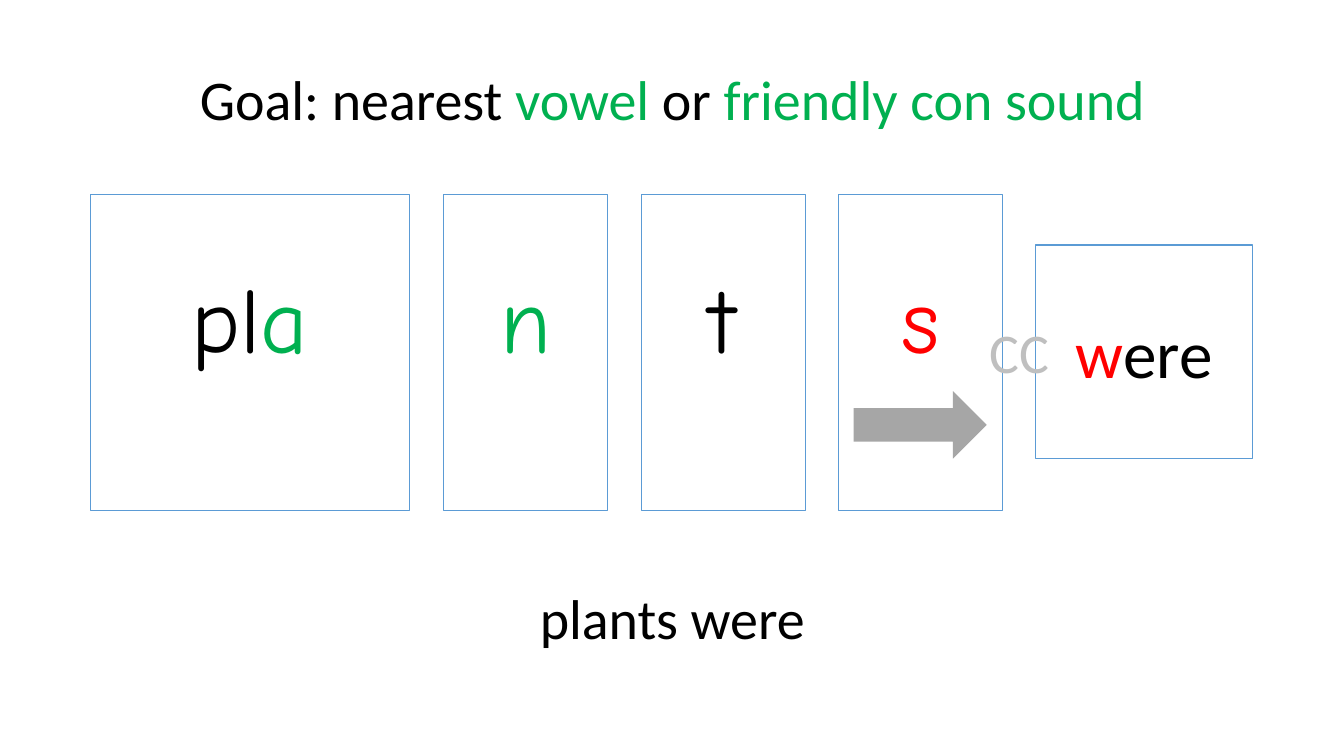
from pptx import Presentation
from pptx.dml.color import RGBColor
from pptx.enum.shapes import MSO_SHAPE
from pptx.enum.text import MSO_ANCHOR, PP_ALIGN
from pptx.util import Pt

RECTANGLE = MSO_SHAPE.RECTANGLE
RIGHT_ARROW = MSO_SHAPE.RIGHT_ARROW
TOP = MSO_ANCHOR.TOP
CENTER = PP_ALIGN.CENTER

BLACK = RGBColor(0x00, 0x00, 0x00)
GREEN = RGBColor(0x00, 0xB0, 0x50)
RED = RGBColor(0xFF, 0x00, 0x00)
BLUE = RGBColor(0x5B, 0x9B, 0xD5)
LIGHT_GRAY = RGBColor(0xBF, 0xBF, 0xBF)
GRAY = RGBColor(0xA6, 0xA6, 0xA6)

LETTER_FONT = "Comic Neue"
BODY_FONT = "Calibri"
TEXT_DROP = 47.5
LETTER_LEFT = 316.8
LETTER_PITCH = 141.1


def write_spans(box, spans, font, size):
    """Write coloured spans as one centred, top-anchored paragraph."""
    frame = box.text_frame
    frame.word_wrap = True
    frame.vertical_anchor = TOP
    para = frame.paragraphs[0]
    para.alignment = CENTER
    for text, color in spans:
        span = para.add_run()
        span.text = text
        span.font.name = font
        span.font.size = Pt(size)
        span.font.color.rgb = color


def add_label(page, left, top, width, spans):
    """Add a one-line text box."""
    box = page.shapes.add_textbox(Pt(left), Pt(top), Pt(width), Pt(55.7))
    write_spans(box, spans, BODY_FONT, 40)


def add_card(page, left, top, width, height, spans, font, size):
    """Add an outlined card with its text set below the top edge."""
    card = page.shapes.add_shape(RECTANGLE, Pt(left), Pt(top), Pt(width), Pt(height))
    card.shadow.inherit = False
    card.fill.background()
    card.line.color.rgb = BLUE
    card.line.width = Pt(0.75)
    card.text_frame.margin_top = Pt(TEXT_DROP)
    write_spans(card, spans, font, size)


def add_sound_card(page, left, width, spans):
    """Add a tall card for one sound of the first word."""
    add_card(page, left, 139, width, 225.4, spans, LETTER_FONT, 66)


def add_arrow(page, left, top, width, height):
    """Add a solid arrow pointing right."""
    arrow = page.shapes.add_shape(RIGHT_ARROW, Pt(left), Pt(top), Pt(width), Pt(height))
    arrow.shadow.inherit = False
    arrow.fill.solid()
    arrow.fill.fore_color.rgb = GRAY
    arrow.line.fill.background()


def main():
    """Build the slide on linking sounds between words."""
    deck = Presentation()
    deck.slide_width, deck.slide_height = Pt(960), Pt(540)
    page = deck.slides.add_slide(deck.slide_layouts[6])

    add_label(page, 51.1, 42.5, 858.2, [
        ("Goal: nearest ", BLACK), ("vowel", GREEN),
        (" or ", BLACK), ("friendly con sound", GREEN),
    ])
    add_sound_card(page, 64.8, 227.5, [("pl", BLACK), ("a", GREEN)])
    for index, span in enumerate([("n", GREEN), ("t", BLACK), ("s", RED)]):
        add_sound_card(page, LETTER_LEFT + index * LETTER_PITCH, 117.4, [span])
    add_card(page, 739.5, 175, 155.5, 152.6,
             [("w", RED), ("ere", BLACK)], BODY_FONT, 48)
    add_label(page, 655.9, 223.2, 144, [("CC", LIGHT_GRAY)])
    add_arrow(page, 609.8, 279.4, 95, 48.2)
    add_label(page, 352.1, 413.3, 256.3, [("plants were", BLACK)])
    deck.save("out.pptx")


if __name__ == "__main__":
    main()
